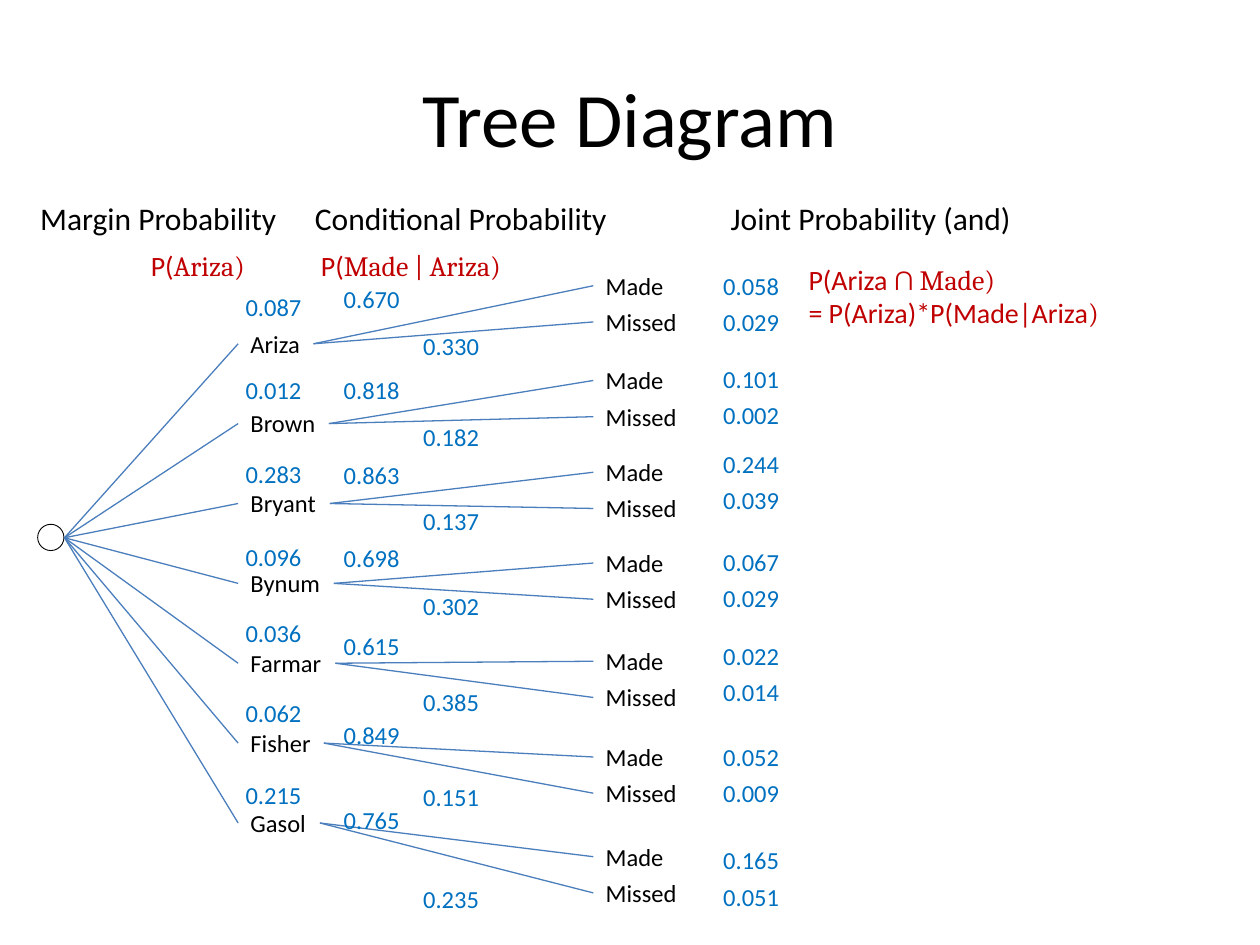
from pptx import Presentation
from pptx.dml.color import RGBColor
from pptx.enum.shapes import MSO_CONNECTOR, MSO_SHAPE
from pptx.enum.text import MSO_ANCHOR, MSO_AUTO_SIZE, PP_ALIGN
from pptx.oxml.ns import qn
from pptx.util import Cm, Pt

LINE = MSO_CONNECTOR.STRAIGHT
OVAL = MSO_SHAPE.OVAL
MIDDLE = MSO_ANCHOR.MIDDLE
GROW = MSO_AUTO_SIZE.SHAPE_TO_FIT_TEXT
LEFT, CENTER = PP_ALIGN.LEFT, PP_ALIGN.CENTER

BLACK, BLUE, RED, EDGE = "000000", "0070C0", "C00000", "4B7EBC"
SANS, SERIF = "Calibri", "Cambria"

ROW_H = 0.86        # height of a 14 pt label
MID = 0.43          # from the top of a label to its middle
DROP = 0.73         # from a Made label down to its Missed label
NUM_W = 1.65
NAME_X, MARGIN_X, LEAF_X, JOINT_X = 4.8, 4.7, 11.96, 14.33
NAME_Y, NAME_STEP = 6.5, 1.61
COND_X = 6.68, 8.28
LEAVES = ("Made", 1.7), ("Missed", 1.96)
HUB = 1.3, 10.84

# name, label width, (margin value, top), top of leaves,
# (conditional value, top) for each leaf, joint values, top of joint values
PLAYERS = [
    ("Ariza", 1.52, ("0.087", 5.77), 5.33,
     (("0.670", 5.61), ("0.330", 6.55)), ("0.058", "0.029"), 5.33),
    ("Brown", 1.83, ("0.012", 7.44), 7.24,
     (("0.818", 7.44), ("0.182", 8.38)), ("0.101", "0.002"), 7.21),
    ("Bryant", 1.85, ("0.283", 9.12), 9.09,
     (("0.863", 9.14), ("0.137", 10.08)), ("0.244", "0.039"), 8.92),
    ("Bynum", 1.93, ("0.096", 10.8), 10.92,
     (("0.698", 10.82), ("0.302", 11.79)), ("0.067", "0.029"), 10.9),
    ("Farmar", 1.96, ("0.036", 12.34), 12.9,
     (("0.615", 12.6), ("0.385", 13.72)), ("0.022", "0.014"), 12.8),
    ("Fisher", 1.73, ("0.062", 13.94), 14.83,
     (("0.849", 14.4), ("0.151", 15.65)), ("0.052", "0.009"), 14.83),
    ("Gasol", 1.65, ("0.215", 15.6), 16.84,
     (("0.765", 16.1), ("0.235", 17.7)), ("0.165", "0.051"), 16.92),
]

HEADS = [
    ("Margin Probability", 0.56, 5.33),
    ("Conditional Probability", 6.1, 6.48),
    ("Joint Probability (and)", 14.48, 6.22),
]


def color(code):
    return RGBColor.from_string(code)


class Board:
    def __init__(self, slide):
        self.slide = slide

    def text(self, box, lines, size=14, ink=BLACK, wrap=False):
        """Add a text box; a line is a string or a list of (text, font) runs."""
        shape = self.slide.shapes.add_textbox(*map(Cm, box))
        frame = shape.text_frame
        frame.word_wrap = wrap
        frame.auto_size = GROW
        for i, line in enumerate(lines):
            para = frame.add_paragraph() if i else frame.paragraphs[0]
            para.alignment = LEFT
            para.font.size = Pt(size)
            para.font.name = SANS
            para.font.color.rgb = color(ink)
            if isinstance(line, str):
                line = [(line, None)]
            for part, face in line:
                run = para.add_run()
                run.text = part
                if face:
                    run.font.name = face
        return frame

    def title(self, box, words):
        frame = self.text(box, [words], 44, wrap=True)
        frame.auto_size = MSO_AUTO_SIZE.NONE
        frame.vertical_anchor = MIDDLE
        frame.paragraphs[0].alignment = CENTER

    def value(self, x, y, digits):
        self.text((x, y, NUM_W, ROW_H), [digits], ink=BLUE)

    def ring(self, box):
        shape = self.slide.shapes.add_shape(OVAL, *map(Cm, box))
        shape.shadow.inherit = False
        shape.fill.background()
        shape.line.color.rgb = color(BLACK)
        shape.line.width = Pt(0.5)

    def branch(self, start, end):
        line = self.slide.shapes.add_connector(LINE, *map(Cm, start + end))
        line.line.color.rgb = color(EDGE)
        line.line.width = Pt(0.75)
        props = line._element.spPr
        props.append(props.makeelement(qn("a:effectLst"), {}))


def tree(board):
    board.ring((0.76, 10.57, 0.53, 0.53))
    for i, (name, width, margin, leaf_y, conds, joints, joint_y) in enumerate(PLAYERS):
        y = NAME_Y + i * NAME_STEP
        board.text((NAME_X, y, width, ROW_H), [name])
        board.branch(HUB, (NAME_X, y + MID))
        board.value(MARGIN_X, margin[1], margin[0])
        for j, (leaf, leaf_w) in enumerate(LEAVES):
            top = leaf_y + j * DROP
            board.text((LEAF_X, top, leaf_w, ROW_H), [leaf])
            board.branch((NAME_X + width, y + MID), (LEAF_X, top + MID))
            digits, cond_y = conds[j]
            board.value(COND_X[j], cond_y, digits)
            board.value(JOINT_X, joint_y + j * DROP, joints[j])


def main():
    deck = Presentation()
    deck.slide_width, deck.slide_height = Cm(25.4), Cm(19.05)
    board = Board(deck.slides.add_slide(deck.slide_layouts[6]))

    board.title((1.27, 0.76, 22.86, 3.18), "Tree Diagram")
    tree(board)
    for words, x, width in HEADS:
        board.text((x, 3.89, width, 1.02), [words], 18)

    board.text((2.79, 4.88, 2.62, 0.94),
               [[("P(", SANS), ("Ariza)", SERIF)]], 16, RED)
    board.text((6.22, 4.88, 4.75, 0.94),
               [[("P(", SANS), ("Made | Ariza)", SERIF)]], 16, RED)
    board.text((16.05, 5.16, 6.4, 1.63),
               [[("P(Ariza ", SANS), ("∩ Made)", SERIF)],
                [("= P(Ariza)*P(Made|Ariza", SANS), (")", SERIF)]],
               16, RED, wrap=True)
    deck.save("out.pptx")


if __name__ == "__main__":
    main()
